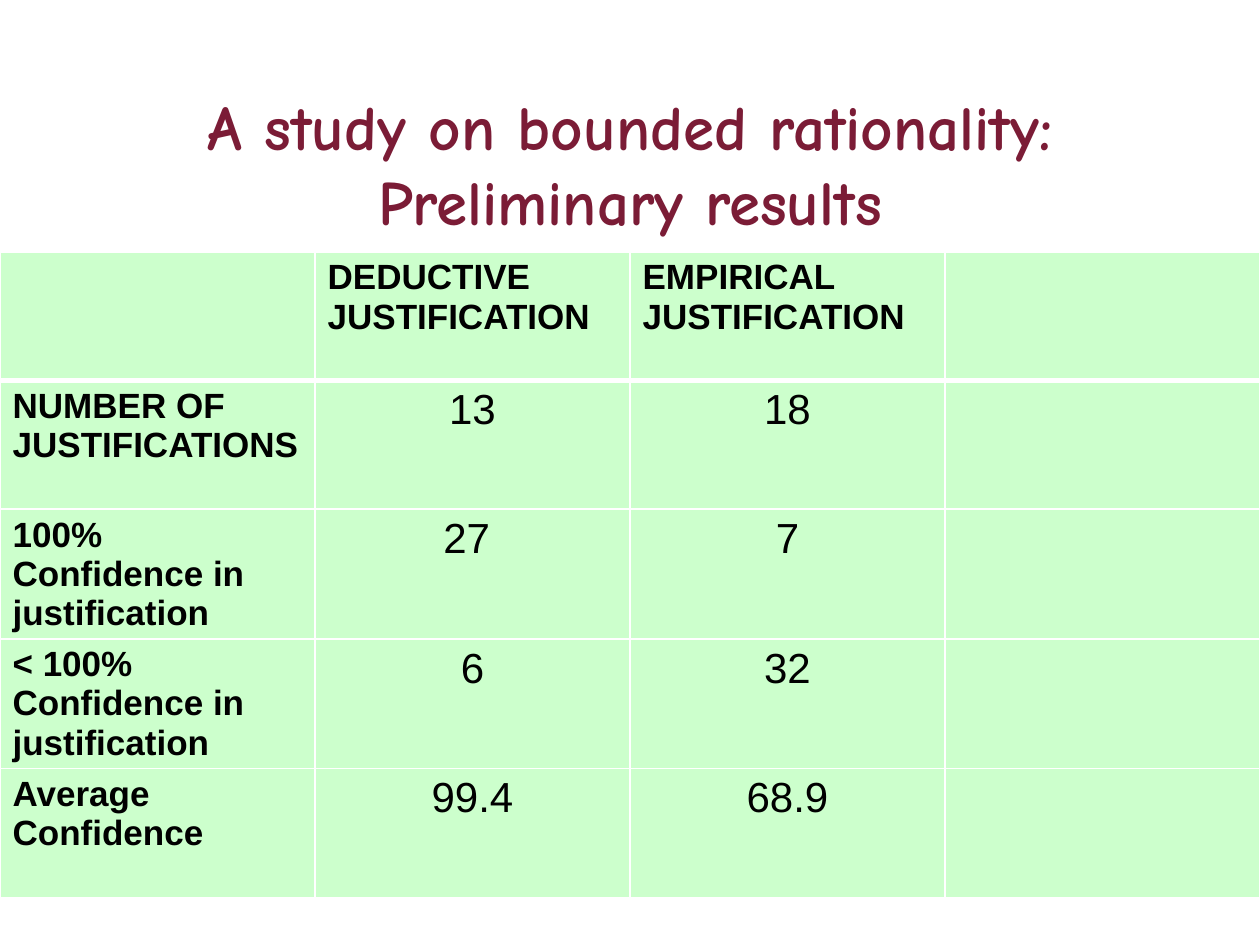
from dataclasses import dataclass

from lxml import etree
from pptx import Presentation
from pptx import util as u
from pptx.dml.color import RGBColor
from pptx.enum import text as t
from pptx.oxml import ns

MAROON = RGBColor(0x7B, 0x1C, 0x36)
BLACK = RGBColor(0, 0, 0)
WHITE = RGBColor(0xFF, 0xFF, 0xFF)
MINT = RGBColor(0xCC, 0xFF, 0xCC)

COLUMN_WIDTH = u.Pt(180)
ROW_HEIGHT = u.Pt(73.5)
THIN, THICK = u.Pt(1), u.Pt(3)


@dataclass
class ResultRow:
    label: str
    deductive: str
    empirical: str

    def texts(self) -> list[str]:
        return [self.label, self.deductive, self.empirical, ""]


ROWS = [
    ResultRow("", "DEDUCTIVE\nJUSTIFICATION", "EMPIRICAL\nJUSTIFICATION"),
    ResultRow("NUMBER OF JUSTIFICATIONS", "13", "18"),
    ResultRow("100% Confidence in justification", "27 ", "7"),
    ResultRow("< 100% Confidence in justification", "6", "32"),
    ResultRow("Average\nConfidence", "99.4", "68.9"),
]


def write_text(frame, text: str, *, size: float, font: str = "Arial",
               color: RGBColor = BLACK, bold: bool = False,
               align=t.PP_ALIGN.LEFT) -> None:
    """Fill a text frame: a newline starts a paragraph, \\v breaks a line."""
    frame.text = text
    for para in frame.paragraphs:
        para.alignment = align
        for span in para.runs:
            span.font.name = font
            span.font.size = u.Pt(size)
            span.font.bold = bold
            span.font.color.rgb = color


def set_borders(cell, widths: dict[str, int]) -> None:
    """Draw white cell borders; the lines must precede the fill in the XML."""
    properties = cell._tc.get_or_add_tcPr()
    for index, (side, width) in enumerate(widths.items()):
        line = etree.Element(ns.qn(f"a:ln{side}"), w=str(int(width)))
        fill = etree.SubElement(line, ns.qn("a:solidFill"))
        etree.SubElement(fill, ns.qn("a:srgbClr"), val=str(WHITE))
        properties.insert(index, line)


def add_title(page) -> None:
    title = page.shapes.title
    title.left, title.top = u.Pt(54), u.Pt(48)
    title.width, title.height = u.Pt(612), u.Pt(90)
    frame = title.text_frame
    frame.auto_size = t.MSO_AUTO_SIZE.NONE
    frame.vertical_anchor = t.MSO_ANCHOR.MIDDLE
    write_text(frame, "A study on bounded rationality:\vPreliminary results",
               size=36, font="Comic Neue", color=MAROON, bold=True,
               align=t.PP_ALIGN.CENTER)


def add_results(page, rows: list[ResultRow]) -> None:
    column_count = len(rows[0].texts())
    table = page.shapes.add_table(
        len(rows), column_count, u.Pt(0), u.Pt(144),
        COLUMN_WIDTH * column_count, ROW_HEIGHT * len(rows)).table
    for row_index, row in enumerate(rows):
        for column_index, text in enumerate(row.texts()):
            cell = table.cell(row_index, column_index)
            cell.fill.solid()
            cell.fill.fore_color.rgb = MINT
            # Headings are bold and left aligned, values larger and centred
            if row_index == 0 or column_index == 0:
                write_text(cell.text_frame, text, size=20, bold=True)
            else:
                write_text(cell.text_frame, text, size=24,
                           align=t.PP_ALIGN.CENTER)
            # A thick rule separates the header from the body
            set_borders(cell, {
                "L": THIN, "R": THIN,
                "T": THICK if row_index == 1 else THIN,
                "B": THICK if row_index == 0 else THIN})


def main() -> None:
    deck = Presentation()
    deck.slide_width, deck.slide_height = u.Pt(720), u.Pt(540)
    page = deck.slides.add_slide(deck.slide_layouts[5])
    add_title(page)
    add_results(page, ROWS)
    deck.save("out.pptx")


if __name__ == "__main__":
    main()
